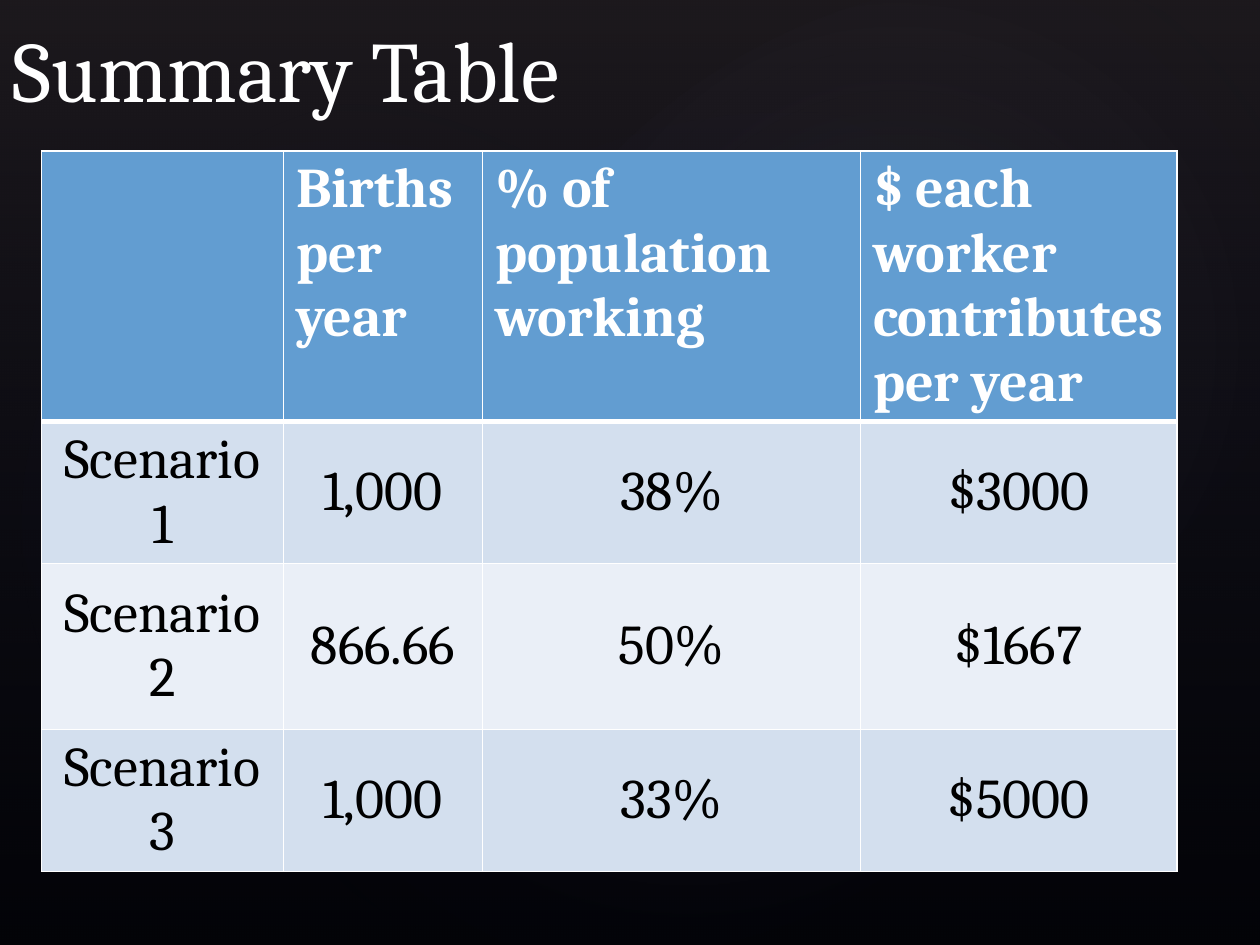
"""Builds a slide with a summary table of three population scenarios."""
from lxml.etree import SubElement
from pptx import Presentation
from pptx.dml.color import RGBColor as RGB
from pptx.enum.shapes import MSO_SHAPE as Shape
from pptx.enum.text import MSO_ANCHOR as Anchor, MSO_AUTO_SIZE as AutoSize, PP_ALIGN as Align
from pptx.oxml import parse_xml
from pptx.oxml.ns import qn
from pptx.util import Inches, Pt

COLORS = {
    "back": "000000", "plum": "504652", "navy": "242852", "glow": "C4BCC6",
    "head": "629DD1", "odd": "D3DFEE", "even": "EAEFF7",
    "light": "FFFFFF", "dark": "000000",
}
DRAWING_NS = "http://schemas.openxmlformats.org/drawingml/2006/main"
LINEAR = '<a:lin ang="5400000" scaled="0"/>'
RADIAL = '<a:path path="circle"><a:fillToRect l="50000" t="50000" r="50000" b="50000"/></a:path>'
GLOWS = [
    ((1.5, 1.14, 7.92, 6.24), 328.7, 7),
    ((-0.3, 1.28, 6.06, 4.9), 294.3, 8),
    ((3.58, 0.13, 7.09, 5.2), 328.7, 8),
]
COLUMN_WIDTHS = [1.92, 1.58, 3, 2.51]
ROW_HEIGHTS = [2.14, 1.12, 1.32, 1.12]
ROWS = [
    ["", "Births per year", "% of population working", "$ each worker contributes per year"],
    ["Scenario 1", "1,000", "38%", "$3000"],
    ["Scenario 2", "866.66", "50%", "$1667"],
    ["Scenario 3", "1,000", "33%", "$5000"],
]


class Deck:
    """Holds the style and the current slide."""

    def __init__(self, prs, font="Cambria"):
        self.font = font
        self.slide = prs.slides.add_slide(prs.slide_layouts[5])
        fill = self.slide.background.fill
        fill.solid()
        fill.fore_color.rgb = RGB.from_string(COLORS["back"])

    def text(self, tf, words, size, color, bold=False, align=Align.LEFT):
        """Write one styled run into a text frame."""
        p = tf.paragraphs[0]
        p.alignment = align
        r = p.add_run()
        r.text = words
        r.font.name, r.font.size, r.font.bold = self.font, Pt(size), bold
        r.font.color.rgb = RGB.from_string(COLORS[color])

    def gradient(self, kind, box, stops, direction, angle=0):
        """Add a borderless shape with a translucent gradient."""
        sp = self.slide.shapes.add_shape(kind, *map(Inches, box))
        sp.shadow.inherit = False
        sp.rotation = angle
        sp.line.fill.background()
        marks = "".join(
            f'<a:gs pos="{pos * 1000}"><a:srgbClr val="{COLORS[color]}">'
            f'<a:alpha val="{alpha * 1000}"/></a:srgbClr></a:gs>'
            for pos, color, alpha in stops)
        grad = parse_xml(f'<a:gradFill xmlns:a="{DRAWING_NS}" rotWithShape="1">'
                         f'<a:gsLst>{marks}</a:gsLst>{direction}</a:gradFill>')
        sp.element.spPr.find(qn("a:prstGeom")).addnext(grad)

    def title(self, words, box, size):
        """Place the title in front of the backdrop."""
        sp = self.slide.shapes.title
        sp.left, sp.top, sp.width, sp.height = map(Inches, box)
        tf = sp.text_frame
        tf.word_wrap, tf.auto_size = True, AutoSize.NONE
        tf.vertical_anchor = Anchor.BOTTOM
        self.text(tf, words, size, "light")
        sp.element.getparent().append(sp.element)

    def borders(self, cell, widths):
        """Draw the four edges of a cell."""
        tc_pr = cell._tc.get_or_add_tcPr()
        for side, width in widths.items():
            ln = SubElement(tc_pr, qn(f"a:ln{side}"), w=str(Pt(width)))
            SubElement(SubElement(ln, qn("a:solidFill")), qn("a:srgbClr"), val=COLORS["light"])

    def table(self, rows, left, top, widths, heights, size):
        """Add a table with a header row and banded body rows."""
        frame = self.slide.shapes.add_table(
            len(rows), len(widths), Inches(left), Inches(top),
            Inches(sum(widths)), Inches(sum(heights)))
        table = frame.table
        for column, width in zip(table.columns, widths):
            column.width = Inches(width)
        for i, (values, height) in enumerate(zip(rows, heights)):
            table.rows[i].height = Inches(height)
            head = i == 0
            band = "head" if head else ("odd" if i % 2 else "even")
            edges = {"L": 1, "R": 1, "T": 3 if i == 1 else 1, "B": 3 if head else 1}
            for j, value in enumerate(values):
                cell = table.cell(i, j)
                self.borders(cell, edges)
                cell.fill.solid()
                cell.fill.fore_color.rgb = RGB.from_string(COLORS[band])
                cell.vertical_anchor = Anchor.TOP if head else Anchor.MIDDLE
                if value:
                    self.text(cell.text_frame, value, size, "light" if head else "dark",
                              head, Align.LEFT if head else Align.CENTER)


def main():
    prs = Presentation()
    prs.slide_width, prs.slide_height = Inches(10), Inches(7.5)
    deck = Deck(prs)
    deck.gradient(Shape.RECTANGLE, (0, 0, 10, 7.5),
                  [(0, "plum", 36), (100, "navy", 10)], LINEAR)
    for box, angle, alpha in GLOWS:
        deck.gradient(Shape.OVAL, box, [(0, "glow", alpha), (58, "navy", 0)], RADIAL, angle)
    deck.table(ROWS, 0.33, 1.2, COLUMN_WIDTHS, ROW_HEIGHTS, 32)
    deck.title("Summary Table", (0, 0, 8.25, 1), 49)
    prs.save("out.pptx")


if __name__ == "__main__":
    main()
